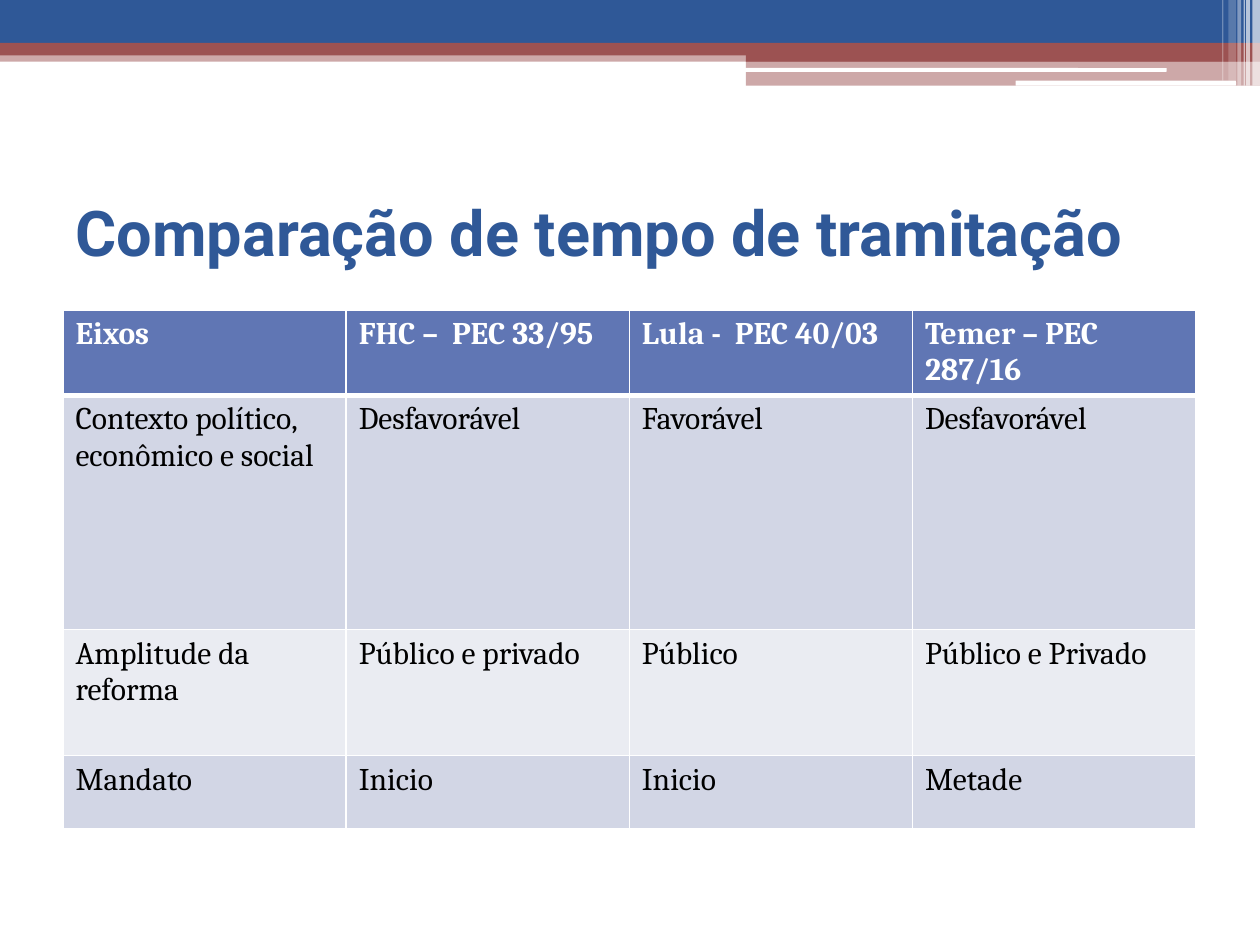
"""Build a slide that compares pension reform timelines in a table."""
from lxml.etree import SubElement
from pptx import Presentation
from pptx.dml.color import RGBColor
from pptx.enum.shapes import MSO_SHAPE
from pptx.enum.text import MSO_ANCHOR, PP_ALIGN
from pptx.oxml import parse_xml
from pptx.oxml.ns import nsdecls, qn
from pptx.util import Inches, Pt

COLORS = {"blue": "2F5897", "red": "9C5252", "white": "FFFFFF", "black": "000000",
          "head": "6076B4", "dark": "D2D6E5", "light": "EAECF2"}


def add_bar(slide, box, color, alpha=100, kind=MSO_SHAPE.RECTANGLE):
    bar = slide.shapes.add_shape(kind, *[Inches(n) for n in box])
    bar.shadow.inherit = False
    bar.line.fill.background()
    bar.fill.solid()
    bar.fill.fore_color.rgb = RGBColor.from_string(COLORS[color])
    if alpha < 100:
        tint = bar.fill._xPr.find(".//" + qn("a:srgbClr"))
        SubElement(tint, qn("a:alpha")).set("val", str(alpha * 1000))


def style_text(frame, font, size, color, bold):
    for run in frame.paragraphs[0].runs:
        run.font.name = font
        run.font.size = Pt(size)
        run.font.bold = bold
        run.font.color.rgb = RGBColor.from_string(COLORS[color])


deck = Presentation()
deck.slide_width, deck.slide_height = Inches(10), Inches(7.5)
slide = deck.slides.add_slide(deck.slide_layouts[5])

bands = [
    ((0, 0.4, 10, 0.09), "red", 50),
    ((0, 0, 10, 0.34), "blue", 100),
    ((0, 0.34, 10, 0.1), "red", 100),
    ((5.92, 0.39, 4.08, 0.1), "red", 100),
    ((5.92, 0.48, 4.08, 0.2), "red", 50),
]
for box, color, alpha in bands:
    add_bar(slide, box, color, alpha)

for box in [(5.91, 0.54, 3.35, 0.03), (8.06, 0.64, 1.75, 0.04)]:
    add_bar(slide, box, "white", kind=MSO_SHAPE.ROUNDED_RECTANGLE)

stripes = [(9.94, 0.06, 0.68, 65), (9.89, 0.03, 0.68, 65), (9.87, 0.01, 0.68, 60),
           (9.82, 0.03, 0.68, 40), (9.75, 0.06, 0.64, 20), (9.7, 0.01, 0.64, 30)]
for left, width, height, alpha in stripes:
    add_bar(slide, (left, 0, width, height), "white", alpha)

title = slide.shapes.title
title.left, title.top = Inches(0.5), Inches(1.25)
title.width, title.height = Inches(9), Inches(1.17)
title.text_frame.text = "Comparação de tempo de tramitação"
title.text_frame.vertical_anchor = MSO_ANCHOR.MIDDLE
title.text_frame.paragraphs[0].alignment = PP_ALIGN.LEFT
style_text(title.text_frame, "Roboto", 36, "blue", True)

rows = [
    ["Eixos", "FHC –  PEC 33/95", "Lula -  PEC 40/03", "Temer – PEC 287/16"],
    ["Contexto político, econômico e social", "Desfavorável", "Favorável", "Desfavorável"],
    ["Amplitude da reforma", "Público e privado", "Público", "Público e Privado"],
    ["Mandato", "Inicio", "Inicio", "Metade"],
]
heights = [0.58, 1.86, 1, 0.58]
fills = ["head", "dark", "light", "dark"]
table = slide.shapes.add_table(len(rows), len(rows[0]), Inches(0.5), Inches(2.46),
                               Inches(8.99), Inches(sum(heights))).table

for r, words in enumerate(rows):
    table.rows[r].height = Inches(heights[r])
    for c, word in enumerate(words):
        cell = table.cell(r, c)
        cell.text_frame.text = word
        style_text(cell.text_frame, "Cambria", 18, "black" if r else "white", r == 0)
        cell.fill.solid()
        cell.fill.fore_color.rgb = RGBColor.from_string(COLORS[fills[r]])
        props = cell._tc.get_or_add_tcPr()
        for i, side in enumerate("LRTB"):
            thick = (r, side) in [(0, "B"), (1, "T")]
            props.insert(i, parse_xml(
                f'<a:ln{side} {nsdecls("a")} w="{Pt(3 if thick else 1)}"><a:solidFill>'
                f'<a:srgbClr val="{COLORS["white"]}"/></a:solidFill></a:ln{side}>'))

deck.save("out.pptx")
